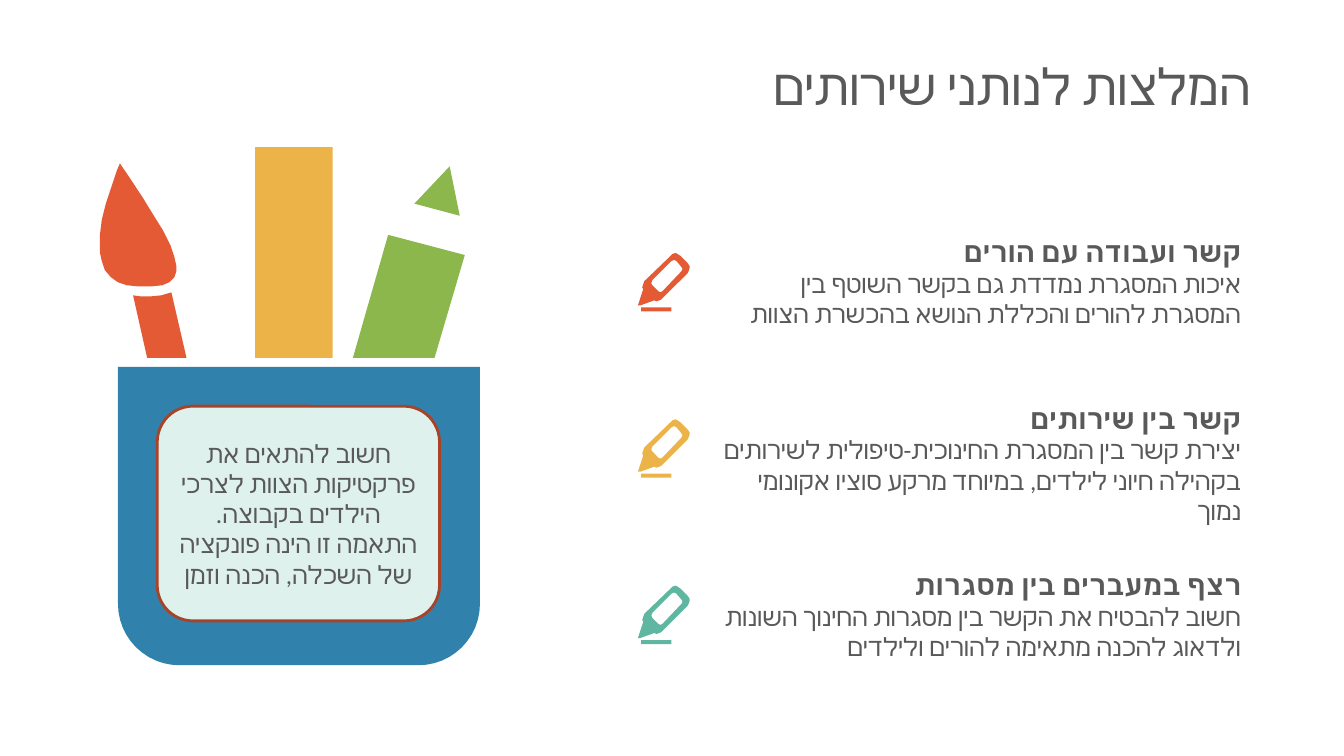
from math import cos, pi, sin

from lxml.etree import SubElement
from pptx import Presentation
from pptx.dml.color import RGBColor
from pptx.enum.shapes import MSO_SHAPE
from pptx.enum.text import MSO_ANCHOR, MSO_AUTO_SIZE, PP_ALIGN
from pptx.oxml.ns import qn
from pptx.util import Inches, Pt

FONT = "Calibri"
TEXT, RED, YELLOW, GREEN = "595959", "E35A35", "ECB448", "8BB74C"
TEAL, BLUE, MINT, BROWN = "5FB7A2", "3081AC", "DFF1EC", "A84327"

# All lengths are columns and rows of a grid with ten cells to the inch.
CELL = Inches(0.1)
FIRST_ROW, ROW_STEP = 22.8, 16.5

RECOMMENDATIONS = [
    (RED, "קשר ועבודה עם הורים",
     "איכות המסגרת נמדדת גם בקשר השוטף בין המסגרת להורים והכללת הנושא בהכשרת הצוות"),
    (YELLOW, "קשר בין שירותים",
     "יצירת קשר בין המסגרת החינוכית-טיפולית לשירותים בקהילה חיוני לילדים, "
     "במיוחד מרקע סוציו אקונומי נמוך"),
    (TEAL, "רצף במעברים בין מסגרות",
     "חשוב להבטיח את הקשר בין מסגרות החינוך השונות ולדאוג להכנה מתאימה להורים ולילדים"),
]
CALLOUT = [
    "חשוב להתאים את פרקטיקות הצוות לצרכי הילדים בקבוצה.",
    "התאמה זו הינה פונקציה של השכלה, הכנה וזמן",
]

PENCIL_TIP = [(44.6, 16.5), (45.6, 21.4), (41.1, 20.2)]
PENCIL_BODY = [(38.5, 23.3), (46.1, 25.3), (43.1, 35.5), (35, 35.5)]
BRUSH_HANDLE = [(17, 29), (18.5, 35.5), (14.6, 35.5), (13.2, 29.3), (13.9, 29.4),
                (15, 29.4), (16, 29.3)]
BRUSH_HEAD = [
    (11.9, 16.2), (12.7, 17.4), (14.1, 19.5), (15.2, 21.3), (16.2, 22.9), (16.9, 24.3),
    (17.3, 25.5), (17.5, 26.4), (17.5, 26.9), (17.3, 27.5), (16.8, 28), (16.1, 28.3),
    (15.1, 28.4), (13.6, 28.4), (12.6, 28.3), (11.7, 28), (11, 27.5), (10.4, 26.8),
    (10.1, 25.9), (9.9, 25), (9.9, 23.4), (10.1, 21.8), (10.5, 20.2), (11.1, 18.4),
    (11.6, 16.9),
]
MARKER_BODY = [
    (3.7, 0), (3.9, 0.1), (4.2, 0.3), (4.9, 1), (5.1, 1.3), (5.1, 1.5), (5, 1.8),
    (4.9, 2), (2.3, 4.6), (2.1, 4.7), (1.8, 4.8), (1.6, 4.7), (0.2, 5.2), (0, 5.2),
    (0, 5.1), (0.5, 3.6), (0.4, 3.4), (0.5, 3.1), (0.6, 2.8), (3.2, 0.3), (3.4, 0.1),
]
MARKER_WINDOW = [
    (3.5, 0.7), (3.3, 0.8), (1.4, 2.7), (1.3, 3), (1.4, 3.2), (2, 3.8), (2.2, 3.9),
    (2.4, 3.8), (4.3, 1.8), (4.4, 1.6), (4.3, 1.4), (3.8, 0.8), (3.6, 0.7),
]


def color(value):
    return RGBColor.from_string(value)


def cells(*lengths):
    return [round(length * CELL) for length in lengths]


def cup_outline(left, top, right, bottom, radius):
    """A box that is square at the top and round at the bottom."""
    points = [(left, top), (right, top)]
    for center, start in ((right - radius, 0), (left + radius, pi / 2)):
        for step in range(13):
            angle = start + step * pi / 24
            points.append((center + radius * cos(angle),
                           bottom - radius + radius * sin(angle)))
    return points


class Page:
    def __init__(self, slide):
        self.slide = slide
        self.shapes = slide.shapes

    def start_group(self):
        """Send the elements that follow into a new group."""
        self.shapes = self.slide.shapes.add_group_shape().shapes

    def paint(self, shape, fill, line=None):
        shape.shadow.inherit = False
        shape.fill.solid()
        shape.fill.fore_color.rgb = color(fill)
        if line:
            shape.line.color.rgb = color(line)
            shape.line.width = Pt(2)
        else:
            shape.line.fill.background()
        return shape

    def preset(self, kind, left, top, width, height, fill, line=None):
        shape = self.shapes.add_shape(kind, *cells(left, top, width, height))
        return self.paint(shape, fill, line)

    def outline(self, fill, *contours, left=0, top=0):
        """Draw closed contours; a second contour cuts a hole in the first."""
        builder = None
        for contour in contours:
            points = [cells(left + x, top + y) for x, y in contour]
            if builder is None:
                builder = self.shapes.build_freeform(*points[0])
            else:
                builder.move_to(*points[0])
            builder.add_line_segments(points[1:], close=True)
        return self.paint(builder.convert_to_shape(), fill)

    def set_lines(self, shape, lines, align, anchor=MSO_ANCHOR.TOP):
        """Fill a shape with right-to-left lines of (text, size, bold)."""
        frame = shape.text_frame
        frame.word_wrap = True
        frame.auto_size = MSO_AUTO_SIZE.NONE
        frame.vertical_anchor = anchor
        frame.text = "\n".join(text for text, size, bold in lines)
        for para, (text, size, bold) in zip(frame.paragraphs, lines):
            para.alignment = align
            para._p.get_or_add_pPr().set("rtl", "1")
            for span in para.runs:
                span.font.size = Pt(size)
                span.font.bold = bold
                span.font.name = FONT
                span.font.color.rgb = color(TEXT)
                SubElement(span._r.get_or_add_rPr(), qn("a:cs"), typeface=FONT)

    def title(self, text, left, top, width, height):
        box = self.slide.shapes.title
        box.left, box.top, box.width, box.height = cells(left, top, width, height)
        self.set_lines(box, [(text, 36, False)], PP_ALIGN.RIGHT)

    def text(self, lines, left, top, width, height):
        box = self.shapes.add_textbox(*cells(left, top, width, height))
        self.set_lines(box, lines, PP_ALIGN.RIGHT)

    def callout(self, texts, left, top, width, height):
        box = self.preset(MSO_SHAPE.ROUNDED_RECTANGLE, left, top, width, height, MINT, BROWN)
        lines = [(text, 18, False) for text in texts]
        self.set_lines(box, lines, PP_ALIGN.CENTER, MSO_ANCHOR.MIDDLE)

    def recommendation(self, top, fill, heading, detail):
        self.start_group()
        self.text([(heading, 20, True), (detail, 18, False)], 69.7, top, 54.4, 10.4)
        self.outline(fill, MARKER_BODY, MARKER_WINDOW, left=63.3, top=top + 2.3)
        self.preset(MSO_SHAPE.RECTANGLE, 63.6, top + 7.7, 3, 0.4, fill)


def main():
    deck = Presentation()
    deck.slide_width, deck.slide_height = Inches(13.33), Inches(7.5)
    page = Page(deck.slides.add_slide(deck.slide_layouts.get_by_name("Title Only")))

    page.title("המלצות לנותני שירותים", 51.4, 5, 73.7, 7.1)

    page.outline(GREEN, PENCIL_TIP)
    page.outline(GREEN, PENCIL_BODY)
    page.outline(RED, BRUSH_HANDLE)
    page.outline(RED, BRUSH_HEAD)
    page.preset(MSO_SHAPE.RECTANGLE, 25.3, 14.6, 7.7, 20.9, YELLOW)
    page.outline(BLUE, cup_outline(11.7, 36.4, 47.6, 66, 6.1))
    page.callout(CALLOUT, 15.6, 40.3, 28, 21.3)

    for index, item in enumerate(RECOMMENDATIONS):
        page.recommendation(FIRST_ROW + index * ROW_STEP, *item)

    deck.save("out.pptx")


if __name__ == "__main__":
    main()
